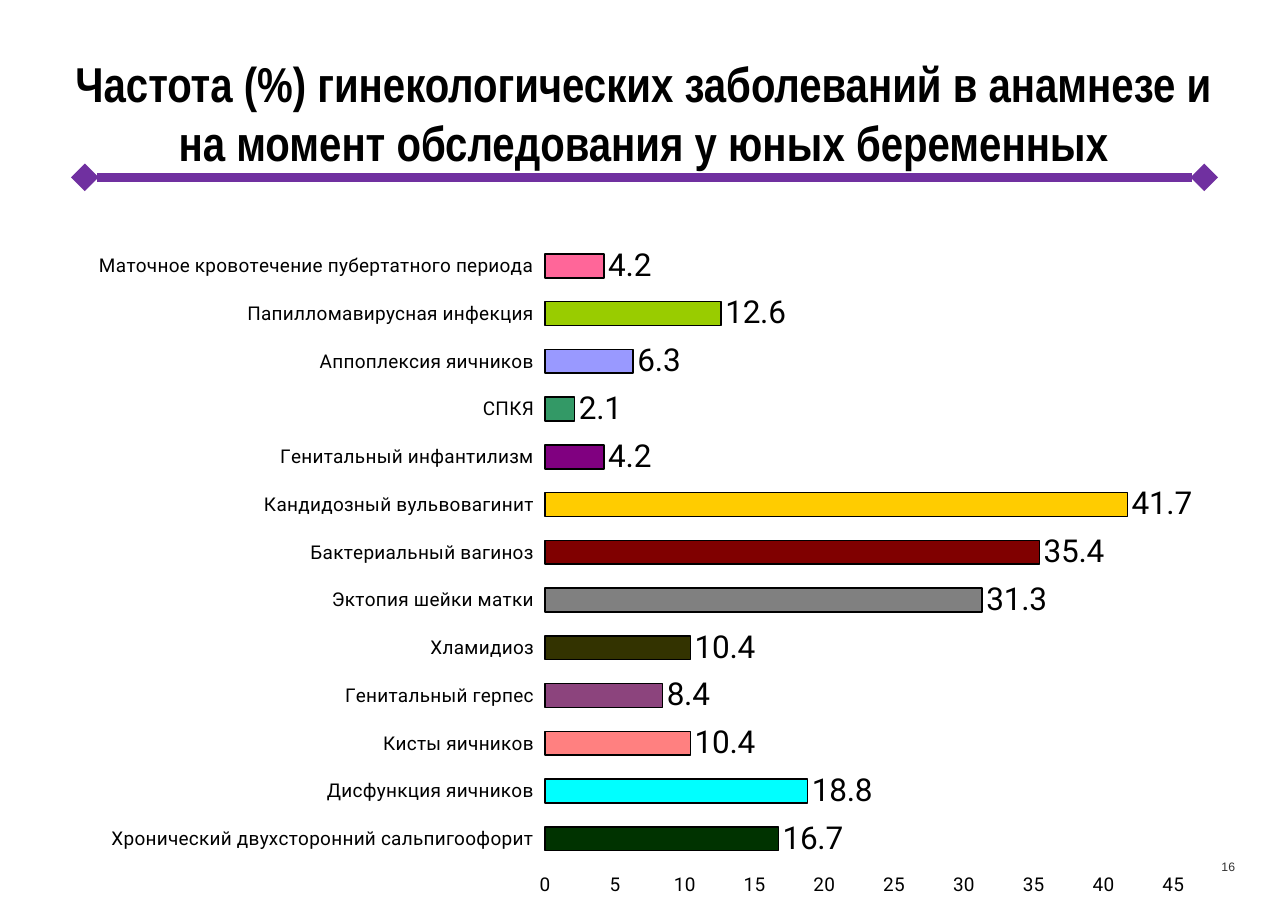
from lxml import etree
from pptx import Presentation
from pptx import util as u
from pptx.chart.data import CategoryChartData
from pptx.dml.color import RGBColor
from pptx.enum import chart as ch, shapes, text
from pptx.oxml import parse_xml
from pptx.oxml.ns import nsdecls, qn

BLACK = RGBColor(0x00, 0x00, 0x00)
WHITE = RGBColor(0xFF, 0xFF, 0xFF)
PURPLE = RGBColor(0x70, 0x30, 0xA0)
GREY = RGBColor(0x31, 0x31, 0x31)

WIDTH, HEIGHT = 11.69, 8.27

DISEASES = [
    ("Хронический двухсторонний сальпигоофорит", 16.7, RGBColor(0x00, 0x33, 0x00)),
    ("Дисфункция яичников", 18.8, RGBColor(0x00, 0xFF, 0xFF)),
    ("Кисты яичников", 10.4, RGBColor(0xFF, 0x80, 0x80)),
    ("Генитальный герпес", 8.4, RGBColor(0x8C, 0x44, 0x7D)),
    ("Хламидиоз", 10.4, RGBColor(0x33, 0x33, 0x00)),
    ("Эктопия шейки матки", 31.3, RGBColor(0x80, 0x80, 0x80)),
    ("Бактериальный вагиноз", 35.4, RGBColor(0x80, 0x00, 0x00)),
    ("Кандидозный вульвовагинит", 41.7, RGBColor(0xFF, 0xCC, 0x00)),
    ("Генитальный инфантилизм", 4.2, RGBColor(0x80, 0x00, 0x80)),
    ("СПКЯ", 2.1, RGBColor(0x33, 0x99, 0x66)),
    ("Аппоплексия яичников", 6.3, RGBColor(0x99, 0x99, 0xFF)),
    ("Папилломавирусная инфекция", 12.6, RGBColor(0x99, 0xCC, 0x00)),
    ("Маточное кровотечение пубертатного периода", 4.2, RGBColor(0xFF, 0x66, 0x99)),
]


def set_font(font, name, size, color, bold=False):
    """Set the typeface, size, colour and weight of a font."""
    font.name, font.size, font.bold = name, u.Pt(size), bold
    font.color.rgb = color


def place_title(slide, wording):
    """Fill the title placeholder and centre it above the rule."""
    title = slide.shapes.title
    title.left, title.top = u.Inches(0.49), u.Inches(0.43)
    title.width, title.height = u.Inches(10.71), u.Inches(1.18)
    frame = title.text_frame
    frame.text = wording
    frame.word_wrap = True
    frame.auto_size = text.MSO_AUTO_SIZE.NONE
    frame.vertical_anchor = text.MSO_ANCHOR.MIDDLE
    heading = frame.paragraphs[0]
    heading.alignment = text.PP_ALIGN.CENTER
    set_font(heading.font, "Arial Narrow", 32, BLACK, True)


def add_rule(slide, left, right, y):
    """Draw the thick rule with a diamond at each end."""
    rule = slide.shapes.add_connector(
        shapes.MSO_CONNECTOR.STRAIGHT,
        u.Inches(left), u.Inches(y), u.Inches(right), u.Inches(y))
    rule.line.color.rgb = PURPLE
    rule.line.width = u.Pt(6)
    outline = rule.line._get_or_add_ln()
    for end in ("a:headEnd", "a:tailEnd"):
        etree.SubElement(outline, qn(end), type="diamond")
    etree.SubElement(rule._element.spPr, qn("a:effectLst"))


def add_page_number(slide, number):
    """Write the small page number at the lower right."""
    box = slide.shapes.add_textbox(
        u.Inches(10.2), u.Inches(7.72), u.Inches(1.01), u.Inches(0.3))
    frame = box.text_frame
    frame.margin_left = frame.margin_right = frame.margin_top = frame.margin_bottom = 0
    frame.word_wrap = True
    frame.vertical_anchor = text.MSO_ANCHOR.MIDDLE
    frame.text = number
    frame.paragraphs[0].alignment = text.PP_ALIGN.RIGHT
    set_font(frame.paragraphs[0].font, "Arial", 8, GREY)


def format_axis(axis):
    """Hide the axis line in white and set its labels."""
    axis.has_major_gridlines = False
    axis.major_tick_mark = ch.XL_TICK_MARK.CROSS
    axis.format.line.color.rgb = WHITE
    axis.format.line.width = u.Pt(2.06)
    set_font(axis.tick_labels.font, "Roboto", 12.4, BLACK)


def fix_plot_area(chart, x, y, w, h):
    """Place the inner plot area as shares of the chart."""
    area = chart.element.xpath(".//c:plotArea")[0]
    for layout in area.findall(qn("c:layout")):
        area.remove(layout)
    shares = "".join(f'<c:{key} val="{share}"/>'
                     for key, share in zip("xywh", (x, y, w, h)))
    area.insert(0, parse_xml(
        f'<c:layout {nsdecls("c")}><c:manualLayout><c:layoutTarget val="inner"/>'
        f'<c:xMode val="edge"/><c:yMode val="edge"/>{shares}'
        '</c:manualLayout></c:layout>'))


def add_frequency_chart(slide):
    """Add the bar chart of disease frequencies."""
    names, shares, colors = zip(*DISEASES)
    frequencies = CategoryChartData(number_format="0.0")
    frequencies.categories = names
    frequencies.add_series("Частота (%)", shares)
    chart = slide.shapes.add_chart(
        ch.XL_CHART_TYPE.BAR_CLUSTERED, u.Inches(0.03), u.Inches(2.01),
        u.Inches(11.18), u.Inches(6.26), frequencies).chart
    chart.has_legend = chart.has_title = False
    set_font(chart.font, "Roboto", 8.5, BLACK)
    fix_plot_area(chart, 0.44, 0.03, 0.51, 0.9)

    format_axis(chart.category_axis)
    format_axis(chart.value_axis)
    scale = chart.value_axis
    scale.minimum_scale, scale.maximum_scale, scale.major_unit = 0, 45, 5
    scale.tick_labels.number_format = "0"
    scale.tick_labels.number_format_is_linked = False

    plot = chart.plots[0]
    plot.gap_width = 100
    plot.vary_by_categories = False
    plot.has_data_labels = True
    labels = plot.data_labels
    labels.show_value = True
    labels.position = ch.XL_LABEL_POSITION.OUTSIDE_END
    set_font(labels.font, "Roboto", 20.6, BLACK)
    for index, color in enumerate(colors):
        bar = plot.series[0].points[index].format
        bar.fill.solid()
        bar.fill.fore_color.rgb = color
        bar.line.color.rgb = BLACK
        bar.line.width = u.Pt(1.03)


def main():
    """Build the slide and save it."""
    deck = Presentation()
    deck.slide_width, deck.slide_height = u.Inches(WIDTH), u.Inches(HEIGHT)
    slide = deck.slides.add_slide(deck.slide_layouts.get_by_name("Title Only"))
    place_title(slide, "Частота (%) гинекологических заболеваний в анамнезе и "
                       "на момент обследования у юных беременных")
    add_rule(slide, 0.77, 10.93, 1.61)
    add_frequency_chart(slide)
    add_page_number(slide, "16")
    deck.save("out.pptx")


if __name__ == "__main__":
    main()
